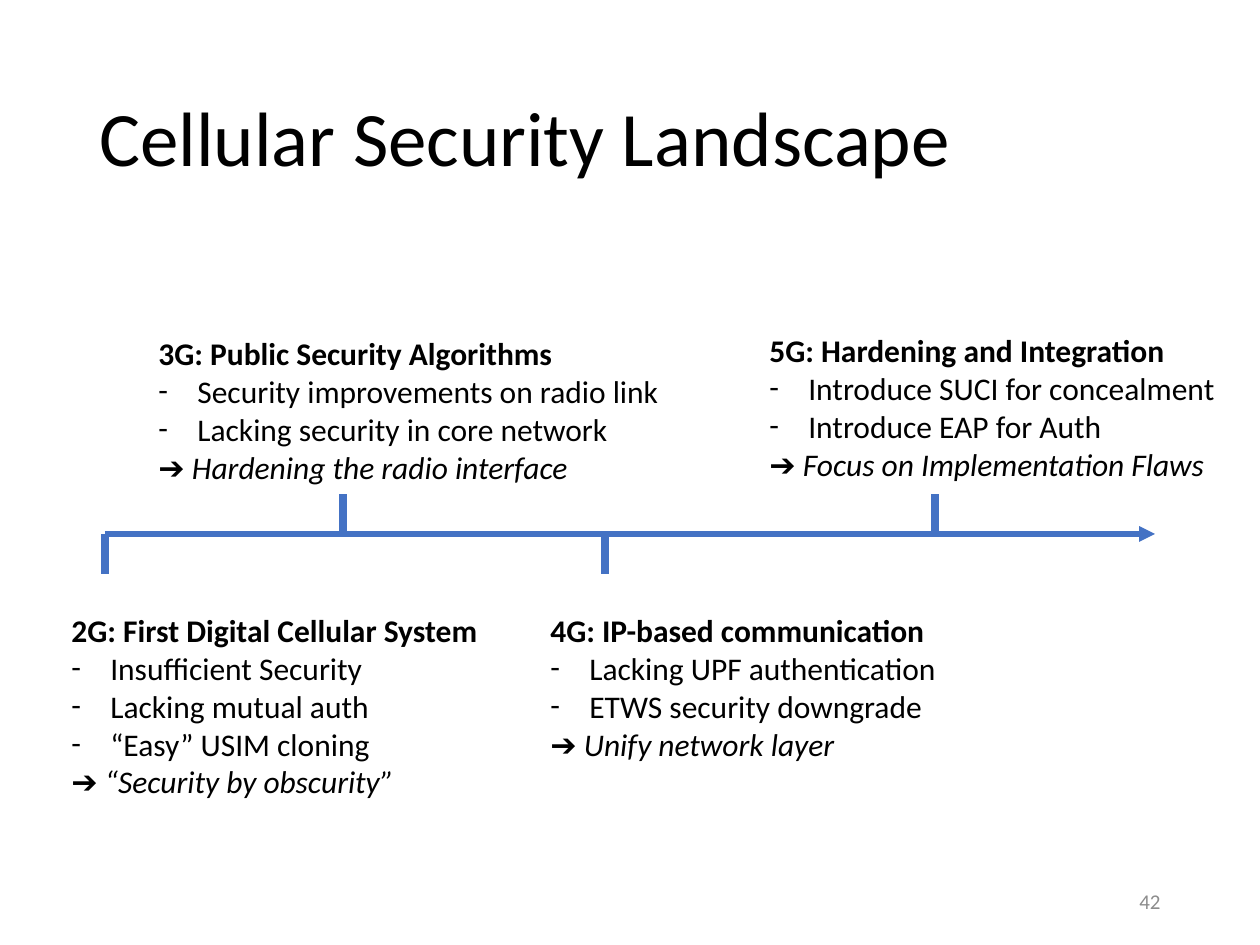
from lxml import etree
from pptx import Presentation
from pptx.dml.color import RGBColor
from pptx.enum.shapes import MSO_CONNECTOR
from pptx.enum.text import MSO_ANCHOR, PP_ALIGN
from pptx.oxml.ns import qn
from pptx.util import Pt

LINE = MSO_CONNECTOR.STRAIGHT
TOP, MIDDLE = MSO_ANCHOR.TOP, MSO_ANCHOR.MIDDLE
LEFT, RIGHT = PP_ALIGN.LEFT, PP_ALIGN.RIGHT
PX = 914400 / 126
FONT = "Calibri"
COLORS = {"text": "000000", "page": "8C8C8C", "line": "4472C4"}

# Content
TITLE = "Cellular Security Landscape"
PAGE = "42"
# tick x, direction (-1 above, 1 below), text box, heading, points, verdict
ERAS = [
    (105, 1, (59, 605, 503, 204), "2G: First Digital Cellular System",
     ["Insufficient Security", "Lacking mutual auth", "“Easy” USIM cloning"],
     "“Security by obscurity”"),
    (343, -1, (146, 328, 533, 165), "3G: Public Security Algorithms",
     ["Security improvements on radio link", "Lacking security in core network"],
     "Hardening the radio interface"),
    (605, 1, (538, 605, 503, 165), "4G: IP-based communication",
     ["Lacking UPF authentication", "ETWS security downgrade"],
     "Unify network layer"),
    (935, -1, (757, 325, 503, 165), "5G: Hardening and Integration",
     ["Introduce SUCI for concealment", "Introduce EAP for Auth"],
     "Focus on Implementation Flaws"),
]
AXIS_Y, AXIS_START, AXIS_END, TICK = 534, 105, 1155, 40
INDENT = 39


def emu(px):
    return round(px * PX)


def add_box(rect, anchor=TOP):
    frame = slide.shapes.add_textbox(*map(emu, rect)).text_frame
    frame.word_wrap = True
    frame.vertical_anchor = anchor
    return frame


def write(para, text, size, color="text", align=LEFT, bold=False, italic=False):
    para.text = text
    para.alignment = align
    font = para.font
    font.name, font.size, font.bold, font.italic = FONT, Pt(size), bold, italic
    font.color.rgb = RGBColor.from_string(COLORS[color])


def add_dash(para):
    props = para._p.get_or_add_pPr()
    props.set("marL", str(emu(INDENT)))
    props.set("indent", str(-emu(INDENT)))
    mark = etree.Element(qn("a:buChar"), char="-")
    font = etree.Element(qn("a:buFont"), typeface=FONT)
    props.insert(0, font)
    props.insert(1, mark)


def add_line(x1, y1, x2, y2, width, arrow=False):
    link = slide.shapes.add_connector(LINE, *map(emu, (x1, y1, x2, y2)))
    link.line.color.rgb = RGBColor.from_string(COLORS["line"])
    link.line.width = Pt(width)
    if arrow:
        etree.SubElement(link.line._get_or_add_ln(), qn("a:tailEnd"), type="triangle")
    etree.SubElement(link._element.spPr, qn("a:effectLst"))


deck = Presentation()
deck.slide_width, deck.slide_height = emu(1260), emu(945)
slide = deck.slides.add_slide(deck.slide_layouts[6])

# Title and page number
head = add_box((87, 50, 1086, 183), MIDDLE).paragraphs[0]
write(head, TITLE, 44)
head.line_spacing = 0.9
write(add_box((890, 876, 283, 50), MIDDLE).paragraphs[0], PAGE, 12, "page", RIGHT)

# Time axis
add_line(AXIS_START, AXIS_Y, AXIS_END, AXIS_Y, 3, arrow=True)

# Eras: a tick and a text block each
for x, side, rect, name, points, verdict in ERAS:
    add_line(x, AXIS_Y, x, AXIS_Y + side * TICK, 4.5)
    frame = add_box(rect)
    write(frame.paragraphs[0], name, 18, bold=True)
    for point in points:
        para = frame.add_paragraph()
        write(para, point, 18)
        add_dash(para)
    write(frame.add_paragraph(), "➔ " + verdict, 18, italic=True)

deck.save("out.pptx")
